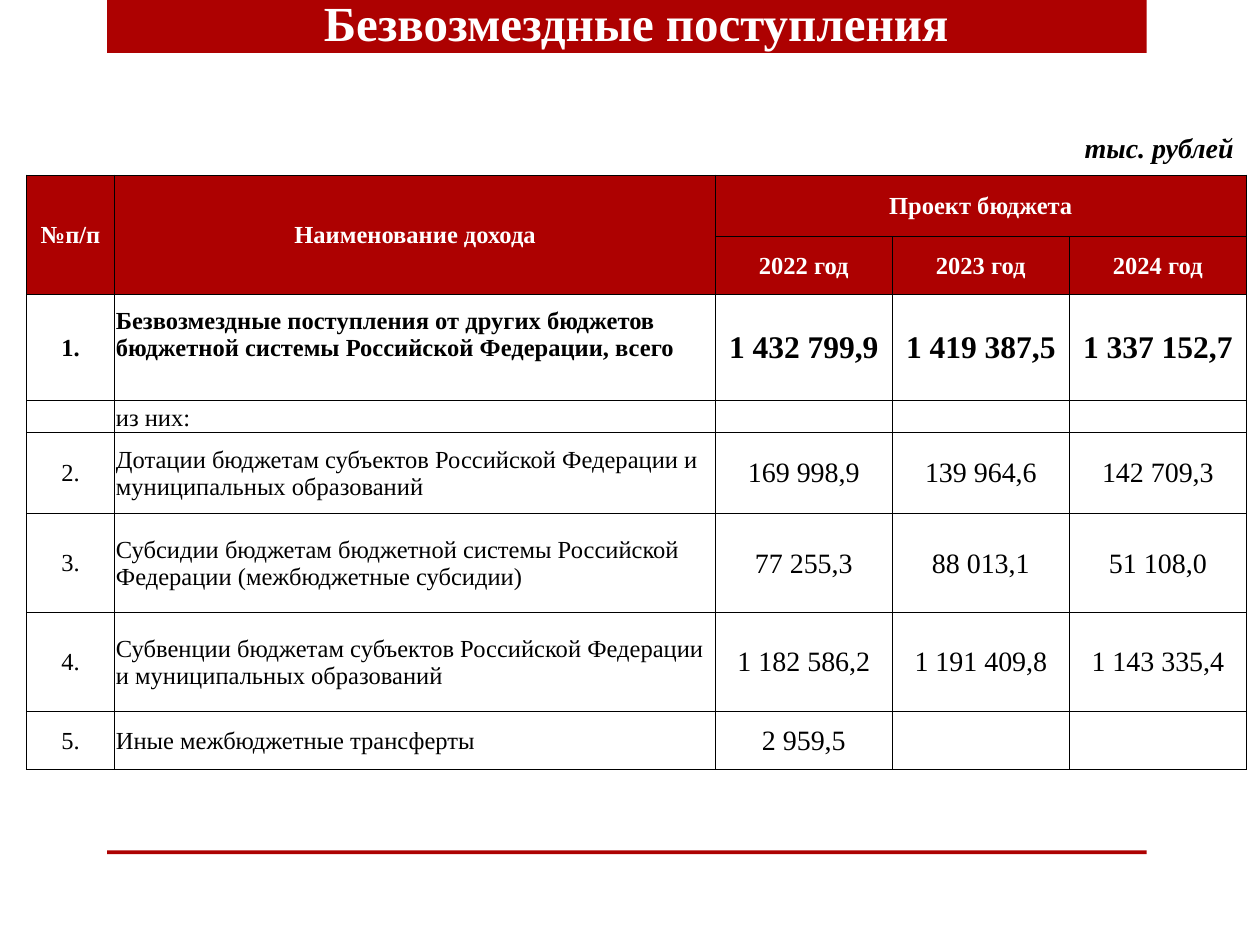
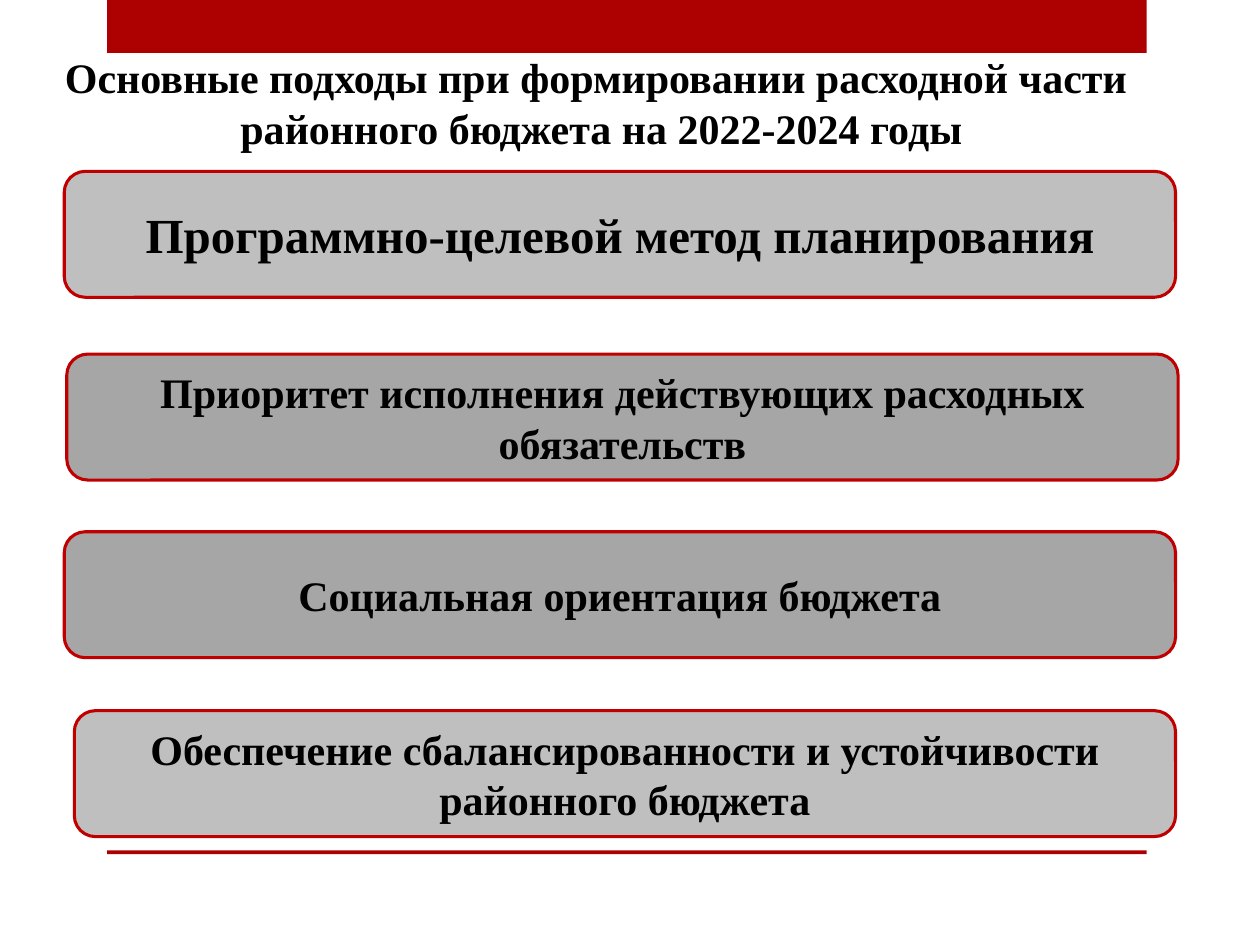
from dataclasses import dataclass
from typing import Any

import lxml.etree
import pptx
import pptx.dml.color
import pptx.enum.shapes
import pptx.enum.text
import pptx.oxml.ns
import pptx.util

RGBColor = pptx.dml.color.RGBColor
Align = pptx.enum.text.PP_ALIGN
Anchor = pptx.enum.text.MSO_ANCHOR
Shape = pptx.enum.shapes.MSO_SHAPE
qn = pptx.oxml.ns.qn

CRIMSON = RGBColor(0xAD, 0x01, 0x01)
OUTLINE_RED = RGBColor(0xC0, 0x00, 0x00)
LIGHT_GRAY = RGBColor(0xBF, 0xBF, 0xBF)
MID_GRAY = RGBColor(0xA6, 0xA6, 0xA6)
WHITE = RGBColor(0xFF, 0xFF, 0xFF)
BLACK = RGBColor(0x00, 0x00, 0x00)
FONT = "Times New Roman"
SLIDE_WIDTH = pptx.util.Inches(10)
SLIDE_HEIGHT = pptx.util.Inches(7.5)
CELL_INSET = pptx.util.Inches(0.01)
BORDER_WIDTH = pptx.util.Pt(0.5)


def across(percent: float) -> int:
    return round(SLIDE_WIDTH * percent / 100)


def down(percent: float) -> int:
    return round(SLIDE_HEIGHT * percent / 100)


@dataclass(frozen=True)
class Area:
    """Position and size in percent of the slide."""
    left: float
    top: float
    width: float
    height: float

    def lengths(self) -> tuple[int, int, int, int]:
        return across(self.left), down(self.top), across(self.width), down(self.height)


@dataclass(frozen=True)
class TextStyle:
    size: float
    color: RGBColor = BLACK
    bold: bool = False
    italic: bool = False
    align: Any = Align.CENTER


@dataclass(frozen=True)
class Approach:
    text: str
    area: Area
    fill: RGBColor
    size: float = 24


@dataclass(frozen=True)
class Income:
    number: str
    title: str
    amounts: tuple[str, str, str]
    height: float
    bold: bool = False
    amount_size: float = 16


BANDS = (Area(8.5, 0, 82.5, 5.6), Area(8.5, 90, 82.5, 0.4))

INCOME_AREA = Area(2.1, 18.53, 96.8, 62.93)
INCOME_COLUMNS = (7, 47.7, 14, 14.1, 14)
HEADER_HEIGHTS = (6.53, 6.13)
HEADER_ROWS = (
    ("№п/п", "Наименование дохода", "Проект бюджета", "", ""),
    ("", "", "2022 год", "2023 год", "2024 год"),
)
HEADER_MERGES = ((0, 0, 1, 0), (0, 1, 1, 1), (0, 2, 0, 4))
INCOMES = (
    Income("1.", "Безвозмездные поступления от других бюджетов бюджетной системы "
           "Российской Федерации, всего",
           ("1 432 799,9", "1 419 387,5", "1 337 152,7"), 11.2, True, 18),
    Income("", "из них:", ("", "", ""), 3.33),
    Income("2.", "Дотации бюджетам субъектов Российской Федерации и муниципальных образований",
           ("169 998,9", "139 964,6", "142 709,3"), 8.67),
    Income("3.", "Субсидии бюджетам бюджетной системы Российской Федерации "
           "(межбюджетные субсидии)",
           ("77 255,3", "88 013,1", "51 108,0"), 10.4),
    Income("4.", "Субвенции бюджетам субъектов Российской Федерации и муниципальных образований",
           ("1 182 586,2", "1 191 409,8", "1 143 335,4"), 10.53),
    Income("5.", "Иные межбюджетные трансферты", ("2 959,5", "", ""), 6.13),
)

APPROACHES = (
    Approach("Программно-целевой метод планирования",
             Area(5.1, 18.13, 88.2, 13.33), LIGHT_GRAY, 28),
    Approach("Приоритет исполнения действующих расходных обязательств",
             Area(5.3, 37.47, 88.2, 13.33), MID_GRAY),
    Approach("Социальная ориентация бюджета",
             Area(5.1, 56.27, 88.2, 13.33), MID_GRAY),
    Approach("Обеспечение сбалансированности и устойчивости районного бюджета",
             Area(5.9, 75.2, 87.4, 13.33), LIGHT_GRAY),
)


def write(frame: Any, text: str, style: TextStyle) -> None:
    frame.text = text
    for paragraph in frame.paragraphs:
        paragraph.alignment = style.align
        for run in paragraph.runs:
            run.font.name = FONT
            run.font.size = pptx.util.Pt(style.size)
            run.font.bold = style.bold
            run.font.italic = style.italic
            run.font.color.rgb = style.color
        if not paragraph.runs:
            lxml.etree.SubElement(paragraph._p, qn("a:endParaRPr"), sz=str(round(style.size * 100)))


def add_block(slide: Any, kind: Any, area: Area, fill: RGBColor) -> Any:
    block = slide.shapes.add_shape(kind, *area.lengths())
    block.shadow.inherit = False
    block.fill.solid()
    block.fill.fore_color.rgb = fill
    block.line.fill.background()
    return block


def add_bands(slide: Any) -> None:
    layout_tree = slide.slide_layout.shapes.element
    for area in BANDS:
        band = add_block(slide, Shape.RECTANGLE, area, CRIMSON)
        layout_tree.append(band.element)


def place_title(slide: Any, text: str, area: Area, style: TextStyle) -> None:
    heading = slide.shapes.title
    heading.left, heading.top, heading.width, heading.height = area.lengths()
    frame = heading.text_frame
    frame.auto_size = pptx.enum.text.MSO_AUTO_SIZE.NONE
    frame.word_wrap = False
    frame.vertical_anchor = Anchor.TOP
    write(frame, text, style)


def add_units(slide: Any, text: str, area: Area) -> None:
    units = slide.shapes.add_textbox(*area.lengths())
    units.text_frame.word_wrap = True
    write(units.text_frame, text, TextStyle(16, bold=True, italic=True, align=Align.RIGHT))


def draw_borders(cell: Any) -> None:
    properties = cell._tc.get_or_add_tcPr()
    for side in ("a:lnL", "a:lnR", "a:lnT", "a:lnB"):
        border = lxml.etree.SubElement(properties, qn(side), w=str(BORDER_WIDTH))
        paint = lxml.etree.SubElement(border, qn("a:solidFill"))
        lxml.etree.SubElement(paint, qn("a:srgbClr"), val=str(BLACK))


def fill_cell(cell: Any, text: str, style: TextStyle, fill: RGBColor) -> None:
    draw_borders(cell)
    cell.fill.solid()
    cell.fill.fore_color.rgb = fill
    cell.margin_left = cell.margin_right = cell.margin_top = CELL_INSET
    cell.margin_bottom = 0
    cell.vertical_anchor = Anchor.MIDDLE
    write(cell.text_frame, text, style)


def add_income_table(slide: Any) -> None:
    heights = HEADER_HEIGHTS + tuple(income.height for income in INCOMES)
    table = slide.shapes.add_table(
        len(heights), len(INCOME_COLUMNS), *INCOME_AREA.lengths()).table
    table.first_row = table.horz_banding = False
    for column, width in zip(table.columns, INCOME_COLUMNS):
        column.width = across(width)
    for row, height in zip(table.rows, heights):
        row.height = down(height)

    header_style = TextStyle(14, WHITE, bold=True)
    for row_index, labels in enumerate(HEADER_ROWS):
        for column_index, label in enumerate(labels):
            fill_cell(table.cell(row_index, column_index), label, header_style, CRIMSON)
    for top, left, bottom, right in HEADER_MERGES:
        table.cell(top, left).merge(table.cell(bottom, right))

    for row_index, income in enumerate(INCOMES, len(HEADER_ROWS)):
        number_style = TextStyle(14, bold=income.bold)
        title_style = TextStyle(14, bold=income.bold, align=Align.LEFT)
        amount_style = TextStyle(income.amount_size if any(income.amounts) else 14,
                                 bold=income.bold)
        texts = (income.number, income.title, *income.amounts)
        styles = (number_style, title_style, *[amount_style] * len(income.amounts))
        for column_index, (text, style) in enumerate(zip(texts, styles)):
            fill_cell(table.cell(row_index, column_index), text, style, WHITE)

    total_row = len(HEADER_ROWS)
    table.cell(total_row, 1).margin_bottom = pptx.util.Inches(0.21)
    table.cell(total_row + 1, 1).vertical_anchor = Anchor.BOTTOM


def add_approach(slide: Any, approach: Approach) -> None:
    panel = add_block(slide, Shape.ROUNDED_RECTANGLE, approach.area, approach.fill)
    panel.line.color.rgb = OUTLINE_RED
    panel.line.width = pptx.util.Pt(1.75)
    panel.text_frame.word_wrap = True
    panel.text_frame.vertical_anchor = Anchor.MIDDLE
    write(panel.text_frame, approach.text, TextStyle(approach.size, bold=True))


def main() -> None:
    deck = pptx.Presentation()
    deck.slide_width, deck.slide_height = SLIDE_WIDTH, SLIDE_HEIGHT
    title_only = deck.slide_layouts[5]

    receipts = deck.slides.add_slide(title_only)
    add_bands(receipts)
    add_income_table(receipts)
    place_title(receipts, "Безвозмездные поступления", Area(24.7, -1.47, 51.8, 7.6),
                TextStyle(28, WHITE, bold=True, align=Align.LEFT))
    add_units(receipts, "тыс. рублей", Area(78.3, 13.2, 20.6, 4.93))

    spending = deck.slides.add_slide(title_only)
    place_title(spending,
                "Основные подходы при формировании расходной части\n"
                " районного бюджета на 2022-2024 годы",
                Area(3.7, 4.8, 87.2, 12.13), TextStyle(24, bold=True))
    for approach in APPROACHES:
        add_approach(spending, approach)

    deck.save("out.pptx")


if __name__ == "__main__":
    main()
